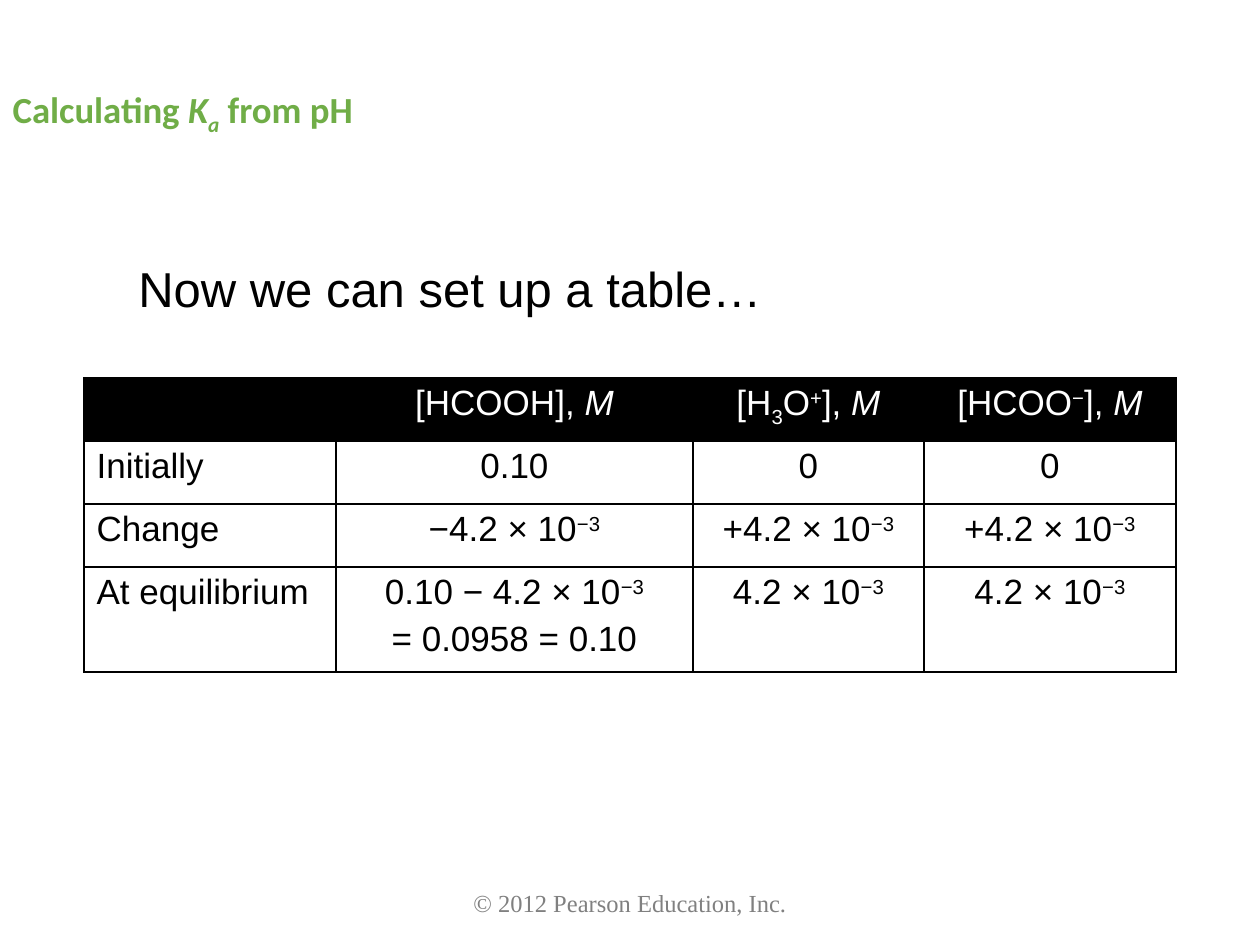
"""Build the slide on calculating Ka from pH with its concentration table."""
from lxml import etree
from pptx import Presentation
from pptx import util as u
from pptx.dml.color import RGBColor
from pptx.enum import text
from pptx.oxml import ns

PX = 7620
THEME = {
    "title": {"name": "Calibri", "size": u.Pt(21), "color": "70AD47", "bold": True},
    "body": {"name": "Arial", "size": u.Pt(28), "color": "000000"},
    "head": {"name": "Arial", "size": u.Pt(20), "color": "FFFFFF", "bold": False},
    "cell": {"name": "Arial", "size": u.Pt(20), "color": "000000", "bold": False},
    "footer": {"name": "Times New Roman", "size": u.Pt(14), "color": "808080"},
    "border": "000000",
    "head_fill": "000000",
    "cell_fill": "FFFFFF",
}
MARKS = {"/": (True, None), "_": (False, "-25000"), "^": (False, "30000"), "~": (True, "-25000")}
LEFT, CENTER = text.PP_ALIGN.LEFT, text.PP_ALIGN.CENTER


def write(tf, content, style, align=LEFT):
    """Fill a text frame; "|" parts runs, and a leading mark sets italic or baseline."""
    for i, line in enumerate(content.split("\n")):
        p = tf.add_paragraph() if i else tf.paragraphs[0]
        p.alignment = align
        if i:
            p.space_before = u.Pt(4)
        for part in line.split("|"):
            italic, base = MARKS.get(part[:1], (False, None))
            r = p.add_run()
            r.text = part[1:] if part[:1] in MARKS else part
            for key, value in THEME[style].items():
                if key == "color":
                    r.font.color.rgb = RGBColor.from_string(value)
                else:
                    setattr(r.font, key, value)
            r.font.italic = italic
            if base:
                r.font._element.set("baseline", base)


def add_borders(cell):
    """Give a cell a one-point line on every side."""
    tcPr = cell._tc.get_or_add_tcPr()
    for side in ("lnL", "lnR", "lnT", "lnB"):
        ln = etree.SubElement(tcPr, ns.qn(f"a:{side}"), w=str(u.Pt(1)))
        fill = etree.SubElement(ln, ns.qn("a:solidFill"))
        etree.SubElement(fill, ns.qn("a:srgbClr"), val=THEME["border"])


prs = Presentation()
prs.slide_width, prs.slide_height = 1200 * PX, 900 * PX
s = prs.slides.add_slide(prs.slide_layouts[5])

sp = s.shapes.title
sp.left, sp.top, sp.width, sp.height = 0, 30 * PX, 1200 * PX, 150 * PX
tf = sp.text_frame
tf.auto_size = text.MSO_AUTO_SIZE.NONE
tf.vertical_anchor = text.MSO_ANCHOR.MIDDLE
write(tf, "Calculating |/K|~a| from pH", "title")
tf.paragraphs[0].line_spacing = 0.9

tf = s.shapes.add_textbox(120 * PX, 240 * PX, 618 * PX, 68 * PX).text_frame
tf.word_wrap = False
tf.auto_size = text.MSO_AUTO_SIZE.SHAPE_TO_FIT_TEXT
write(tf, "Now we can set up a table…", "body")

ROWS = [
    ["", "[HCOOH], |/M", "[H|_3|O|^+|], |/M", "[HCOO|^−|], |/M"],
    ["Initially", "0.10", "0", "0"],
    ["Change", "−4.2 × 10|^−3", "+4.2 × 10|^−3", "+4.2 × 10|^−3"],
    ["At equilibrium", "0.10 − 4.2 × 10|^−3\n= 0.0958 = 0.10", "4.2 × 10|^−3", "4.2 × 10|^−3"],
]
WIDTHS, HEIGHTS = [240, 340, 220, 240], [60, 60, 60, 100]
table = s.shapes.add_table(
    len(ROWS), len(WIDTHS), 80 * PX, 360 * PX, sum(WIDTHS) * PX, sum(HEIGHTS) * PX
).table
table.first_row = table.horz_banding = False
for column, width in zip(table.columns, WIDTHS):
    column.width = width * PX
for i, (row, height) in enumerate(zip(ROWS, HEIGHTS)):
    table.rows[i].height = height * PX
    style = "cell" if i else "head"
    for j, content in enumerate(row):
        cell = table.cell(i, j)
        add_borders(cell)
        cell.fill.solid()
        cell.fill.fore_color.rgb = RGBColor.from_string(THEME[f"{style}_fill"])
        if content:
            write(cell.text_frame, content, style, CENTER if j else LEFT)

tf = s.shapes.add_textbox(290 * PX, 820 * PX, 620 * PX, 60 * PX).text_frame
tf.word_wrap = True
tf.vertical_anchor = text.MSO_ANCHOR.BOTTOM
write(tf, "© 2012 Pearson Education, Inc.", "footer", CENTER)

prs.save("out.pptx")
